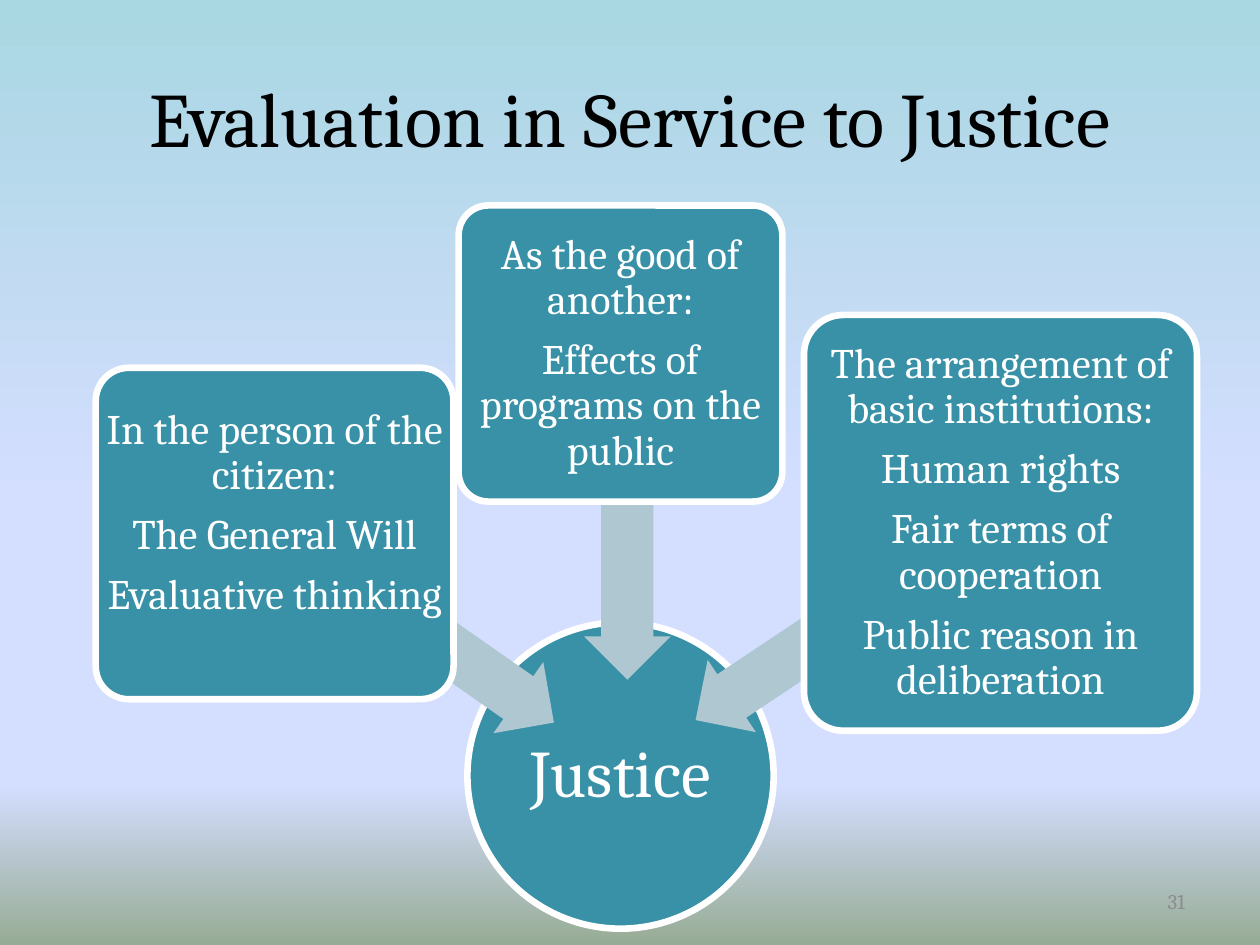
from dataclasses import dataclass

from lxml.etree import SubElement
from pptx import Presentation
from pptx.dml.color import RGBColor
from pptx.enum.shapes import MSO_SHAPE
from pptx.enum.text import MSO_ANCHOR, PP_ALIGN
from pptx.oxml.ns import qn
from pptx.util import Pt

FONT = "Cambria"
TEAL = "3891A7"
PALE = "AFC7D0"
WHITE = "FFFFFF"
BACKGROUND = [(0, "A9D7E2"), (53, "D4DEFF"), (83, "D4DEFF"), (100, "96AB94")]


@dataclass
class Frame:
    left: float
    top: float
    width: float
    height: float

    def lengths(self) -> tuple:
        return Pt(self.left), Pt(self.top), Pt(self.width), Pt(self.height)


@dataclass
class Source:
    frame: Frame
    lines: list[str]
    arrow: Frame
    rotation: float
    bottom_inset: float = 0


SOURCES = [
    Source(
        Frame(54.7, 210.2, 204.5, 189.4),
        ["In the person of the citizen:", "The General Will", "Evaluative thinking"],
        Frame(184.3, 346.3, 145.4, 49.7), 215, 23,
    ),
    Source(
        Frame(262.1, 117.4, 185, 169.2),
        ["As the good of another:", "Effects of programs on the public"],
        Frame(285.8, 290.9, 145.4, 49.7), 270,
    ),
    Source(
        Frame(459.4, 180, 224.6, 237.6),
        ["The arrangement of basic institutions:", "Human rights",
         "Fair terms of cooperation", "Public reason in deliberation"],
        Frame(383.8, 341.3, 163.4, 49.7), 326.3,
    ),
]


def color(value: str) -> RGBColor:
    return RGBColor.from_string(value)


def write(shape, lines: list[str], *, size: float, ink: str = WHITE,
          align=PP_ALIGN.CENTER, spacing: float = 1, after: float = 0,
          inset: float | None = None, bottom: float = 0) -> None:
    text = shape.text_frame
    text.word_wrap = True
    text.vertical_anchor = MSO_ANCHOR.MIDDLE
    if inset is not None:
        text.margin_left = text.margin_right = text.margin_top = Pt(inset)
        text.margin_bottom = Pt(inset + bottom)
    for index, line in enumerate(lines):
        para = text.add_paragraph() if index else text.paragraphs[0]
        para.alignment = align
        para.line_spacing = spacing
        para.space_after = Pt(after)
        span = para.add_run()
        span.text = line
        span.font.name = FONT
        span.font.size = Pt(size)
        span.font.color.rgb = color(ink)


def draw(page, kind, frame: Frame, fill: str, outline: bool = True):
    shape = page.shapes.add_shape(kind, *frame.lengths())
    shape.shadow.inherit = False
    shape.fill.solid()
    shape.fill.fore_color.rgb = color(fill)
    if outline:
        shape.line.color.rgb = color(WHITE)
        shape.line.width = Pt(3.78)
    else:
        shape.line.fill.background()
    return shape


def draw_source(page, source: Source) -> None:
    arrow = draw(page, MSO_SHAPE.LEFT_ARROW, source.arrow, PALE, outline=False)
    arrow.adjustments[0] = 0.6
    arrow.adjustments[1] = 0.5
    arrow.rotation = source.rotation
    box = draw(page, MSO_SHAPE.ROUNDED_RECTANGLE, source.frame, TEAL)
    box.adjustments[0] = 0.1
    write(box, source.lines, size=24, spacing=0.9, after=8.4,
          inset=0, bottom=source.bottom_inset)


def paint_background(page) -> None:
    fill = page.background.fill
    fill.gradient()
    fill.gradient_angle = 270
    stops = next(page.background._cSld.iter(qn("a:gsLst")))
    for stop in list(stops):
        stops.remove(stop)
    for position, value in BACKGROUND:
        stop = SubElement(stops, qn("a:gs"), pos=str(position * 1000))
        SubElement(stop, qn("a:srgbClr"), val=value)


def main() -> None:
    deck = Presentation()
    deck.slide_width, deck.slide_height = Pt(720), Pt(540)
    page = deck.slides.add_slide(deck.slide_layouts[5])
    paint_background(page)

    title = page.shapes.title
    title.left, title.top, title.width, title.height = Frame(36, 21.6, 648, 90).lengths()
    write(title, ["Evaluation in Service to Justice"], size=44, ink="000000")

    circle = draw(page, MSO_SHAPE.OVAL, Frame(267.1, 355.7, 175, 175), TEAL)
    write(circle, ["Justice"], size=38, spacing=0.9, inset=2)
    for source in SOURCES:
        draw_source(page, source)

    number = page.shapes.add_textbox(*Frame(516.2, 500.4, 168, 28.8).lengths())
    write(number, ["31"], size=12, ink="8C8C8C", align=PP_ALIGN.RIGHT)
    deck.save("out.pptx")


if __name__ == "__main__":
    main()
